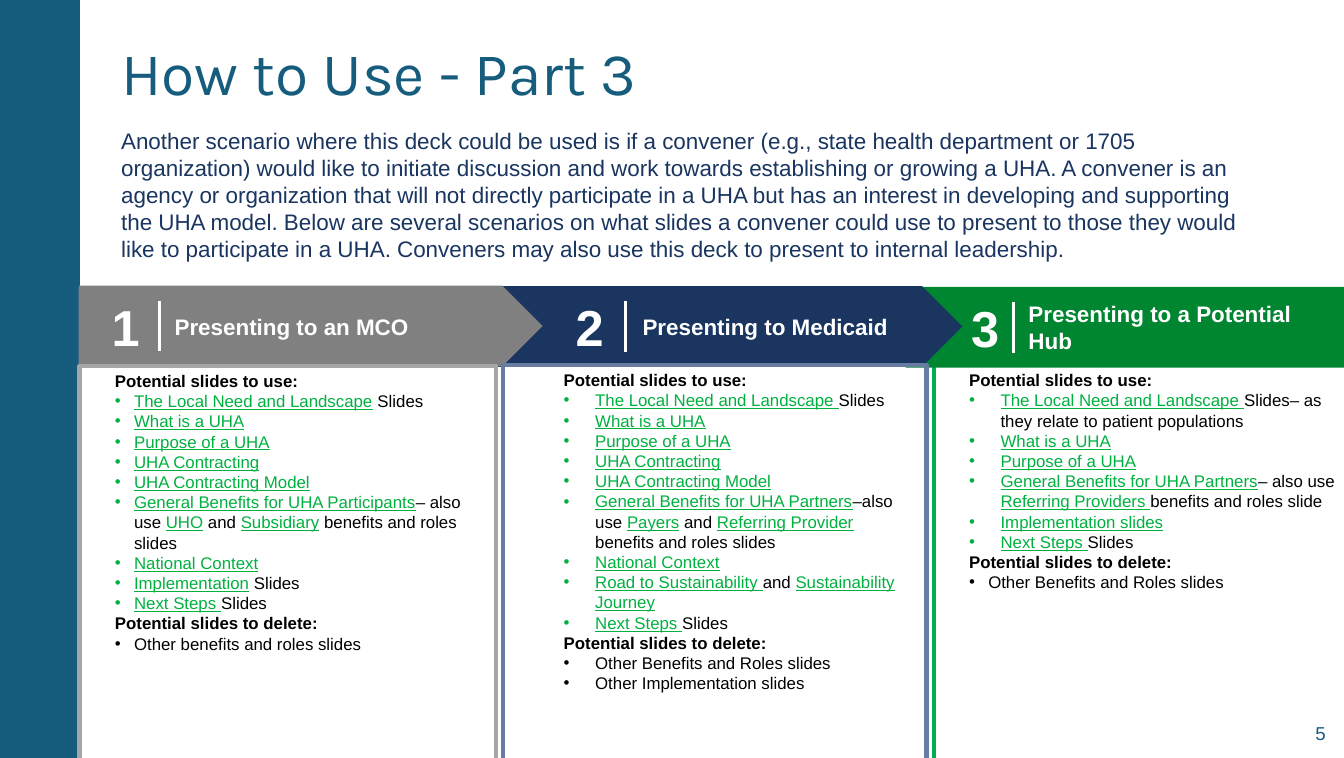
from pptx import Presentation
from pptx.dml.color import RGBColor
from pptx.enum.shapes import MSO_CONNECTOR as Link, MSO_SHAPE as Form
from pptx.enum.text import MSO_ANCHOR as Anchor, MSO_AUTO_SIZE as Fit, PP_ALIGN as Align
from pptx.oxml.ns import qn
from pptx.util import Cm, Pt
from lxml.etree import SubElement

# Content: text between bars is a green, underlined slide name
TITLE = "How to Use - Part 3"
INTRO = (
    "Another scenario where this deck could be used is if a convener (e.g., state health "
    "department or 1705 organization) would like to initiate discussion and work towards "
    "establishing or growing a UHA. A convener is an agency or organization that will not "
    "directly participate in a UHA but has an interest in developing and supporting the UHA "
    "model. Below are several scenarios on what slides a convener could use to present to "
    "those they would like to participate in a UHA. Conveners may also use this deck to "
    "present to internal leadership."
)
USE, DROP = "Potential slides to use:", "Potential slides to delete:"
MCO = dict(
    num="1", name="Presenting to an MCO",
    use=["|The Local Need and Landscape| Slides", "|What is a UHA|", "|Purpose of a UHA|",
         "|UHA Contracting|", "|UHA Contracting Model|",
         "|General Benefits for UHA Participants|– also use |UHO| and |Subsidiary|"
         " benefits and roles slides",
         "|National Context|", "|Implementation| Slides", "|Next Steps |Slides"],
    drop=["Other benefits and roles slides"],
    form=Form.PENTAGON, fill="808080", line="A6A6A6",
    banner=(1.98, 7.18, 11.66), digit=2.41, bar=4.01, start=4.14, end=12.88,
    box=(2.0, 9.19, 10.46), head=0.64, hang=(0.48, 0.48),
)
MEDICAID = dict(
    num="2", name="Presenting to Medicaid",
    use=["|The Local Need and Landscape |Slides", "|What is a UHA|", "|Purpose of a UHA|",
         "|UHA Contracting|", "|UHA Contracting Model|",
         "|General Benefits for UHA Partners|–also use |Payers| and |Referring Provider |"
         "benefits and roles slides",
         "|National Context|", "|Road to Sustainability |and |Sustainability Journey|",
         "|Next Steps |Slides"],
    drop=["Other Benefits and Roles slides", "Other Implementation slides"],
    form=Form.PENTAGON, fill="193560", line="687DA1",
    banner=(12.12, 7.19, 12.07), digit=14.07, bar=15.72, start=15.9, end=24.0,
    box=(12.65, 9.17, 10.64), head=1.27, hang=(0.79, 0.79),
)
HUB = dict(
    num="3", name="Presenting to a Potential Hub",
    use=["|The Local Need and Landscape |Slides– as they relate to patient populations",
         "|What is a UHA|", "|Purpose of a UHA|",
         "|General Benefits for UHA Partners|– also use |Referring Providers |"
         "benefits and roles slide",
         "|Implementation slides|", "|Next Steps |Slides"],
    drop=["Other Benefits and Roles slides"],
    form=Form.RECTANGLE, fill="008530", line="00B050",
    banner=(22.76, 7.21, 11.07), digit=24.01, bar=25.48, start=25.6, end=33.43,
    box=(23.47, 9.17, 10.39), head=0.64, hang=(0.79, 0.48),
)

# Shared sizes in cm, and colours
WIDE, HIGH = 33.78, 19.05
BAND, BOX_HIGH = 2.03, 9.96
LEFT, SPAN = 2.79, 29.29
TEAL, NAVY, GREEN, BLACK, WHITE = "165C7D", "193560", "00B140", "000000", "FFFFFF"

deck = Presentation()
deck.slide_width, deck.slide_height = Cm(WIDE), Cm(HIGH)
slide = deck.slides.add_slide(deck.slide_layouts[1])


def rgb(code):
    return RGBColor.from_string(code)


def add_run(para, text, size, color, bold=False, under=False, face="Arial"):
    run = para.add_run()
    run.text = text
    font = run.font
    font.name, font.size, font.bold = face, Pt(size), bold
    font.color.rgb = rgb(color)
    if under:
        font.underline = True


def set_frame(shape, anchor):
    frame = shape.text_frame
    frame.word_wrap, frame.auto_size = True, Fit.NONE
    frame.vertical_anchor = anchor
    return frame


def place(shape, x, y, w, h):
    shape.left, shape.top, shape.width, shape.height = Cm(x), Cm(y), Cm(w), Cm(h)


def add_text(text, x, y, w, h, size, color, bold=False, align=Align.LEFT):
    box = slide.shapes.add_textbox(Cm(x), Cm(y), Cm(w), Cm(h))
    para = set_frame(box, Anchor.MIDDLE).paragraphs[0]
    para.alignment = align
    add_run(para, text, size, color, bold)


def add_form(form, x, y, w, h, fill=None, line=None):
    shape = slide.shapes.add_shape(form, Cm(x), Cm(y), Cm(w), Cm(h))
    shape.shadow.inherit = False
    if fill:
        shape.fill.solid()
        shape.fill.fore_color.rgb = rgb(fill)
    else:
        shape.fill.background()
    if line:
        shape.line.color.rgb, shape.line.width = rgb(line), Pt(3)
    else:
        shape.line.fill.background()
    return shape


def set_bullet(para, left, hang, mark=None):
    props = para._p.get_or_add_pPr()
    props.set("marL", str(Cm(left)))
    props.set("indent", str(-Cm(hang)))
    if mark:
        SubElement(props, qn("a:buFont")).set("typeface", "Arial")
        SubElement(props, qn("a:buChar")).set("char", mark)
    else:
        SubElement(props, qn("a:buNone"))


def add_banner(col):
    x, y, w = col["banner"]
    add_form(col["form"], x, y, w, BAND, col["fill"])
    add_text(col["num"], col["digit"], y, 1.5, BAND, 36, WHITE, True, Align.CENTER)
    bar, start = col["bar"], col["start"]
    add_text(col["name"], start, y, col["end"] - start, BAND, 16, WHITE, True)
    rule = slide.shapes.add_connector(
        Link.STRAIGHT, Cm(bar), Cm(y + 0.38), Cm(bar), Cm(y + 1.65))
    rule.line.color.rgb, rule.line.width = rgb(WHITE), Pt(2.25)
    SubElement(rule._element.spPr, qn("a:effectLst"))


def add_box(col):
    x, y, w = col["box"]
    shape = add_form(Form.RECTANGLE, x, y, w, BOX_HIGH, line=col["line"])
    frame = set_frame(shape, Anchor.TOP)
    para, head = frame.paragraphs[0], col["head"]
    groups = zip((USE, DROP), (col["use"], col["drop"]), col["hang"])
    for label, items, hang in groups:
        if label == DROP:
            para = frame.add_paragraph()
        para.alignment = Align.LEFT
        set_bullet(para, head, 0)
        add_run(para, label, 12, BLACK, True)
        for item in items:
            para = frame.add_paragraph()
            para.alignment = Align.LEFT
            set_bullet(para, head + hang, hang, "•")
            for i, part in enumerate(item.split("|")):
                if part:
                    named = i % 2 == 1
                    add_run(para, part, 12, GREEN if named else BLACK, under=named)


# Side band, title and introduction
add_form(Form.RECTANGLE, 0, 0, 2.01, HIGH, TEAL)
title, body = slide.shapes.title, slide.placeholders[1]
place(title, LEFT, 0.71, SPAN, 2.16)
para = set_frame(title, Anchor.MIDDLE).paragraphs[0]
para.alignment = Align.LEFT
add_run(para, TITLE, 43.1, TEAL, face="Karla")
place(body, LEFT, 3.07, SPAN, 3.86)
para = set_frame(body, Anchor.TOP).paragraphs[0]
set_bullet(para, 0, 0)
add_run(para, INTRO, 16, NAVY)

# Columns from right to left, so that each arrow overlaps the next banner
add_box(HUB)
for col in (HUB, MEDICAID, MCO):
    add_banner(col)
for col in (MEDICAID, MCO):
    add_box(col)

# Slide number
add_text("5", 30.45, 17.91, 3.12, 1.02, 13.3, TEAL, align=Align.RIGHT)

deck.save("out.pptx")
